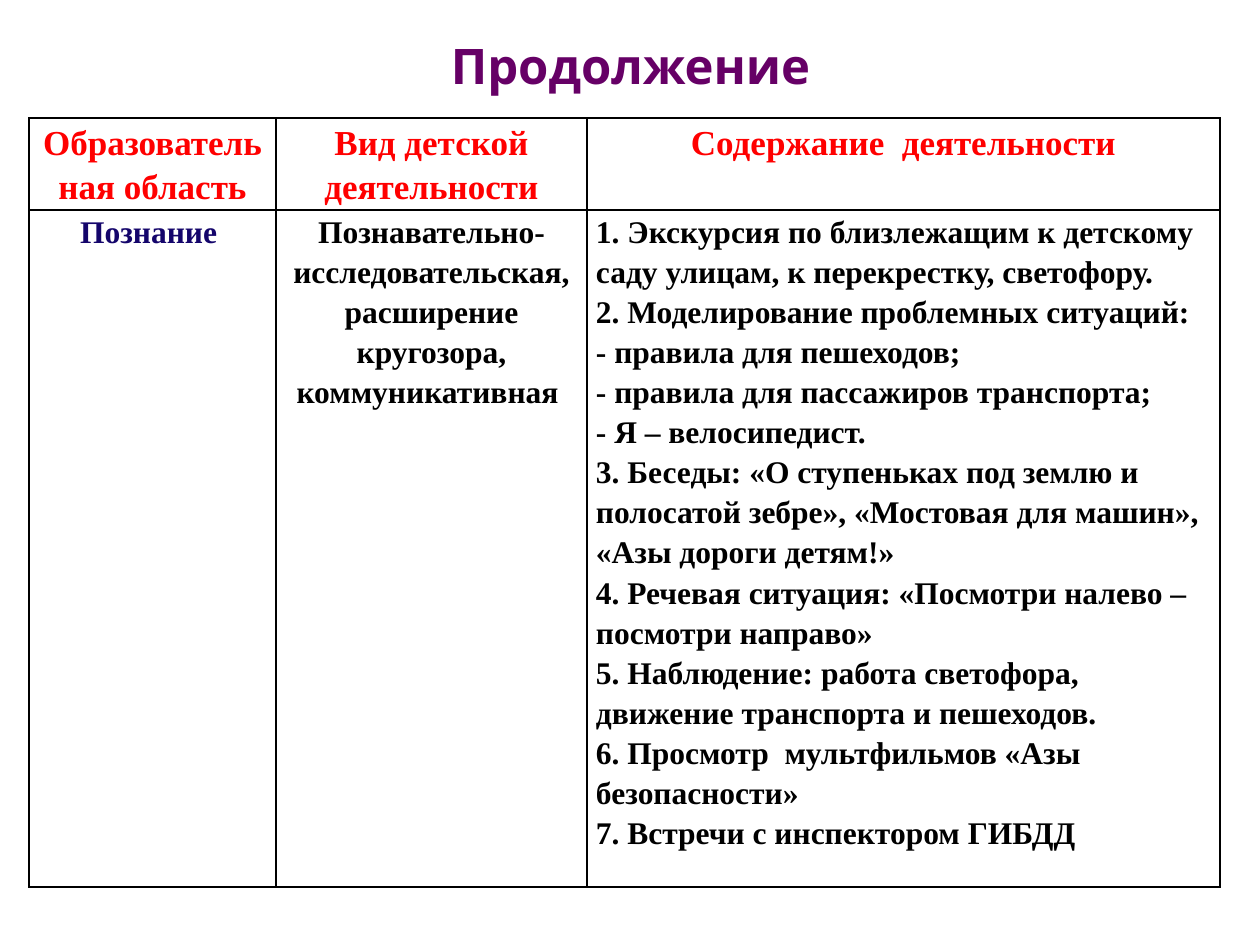
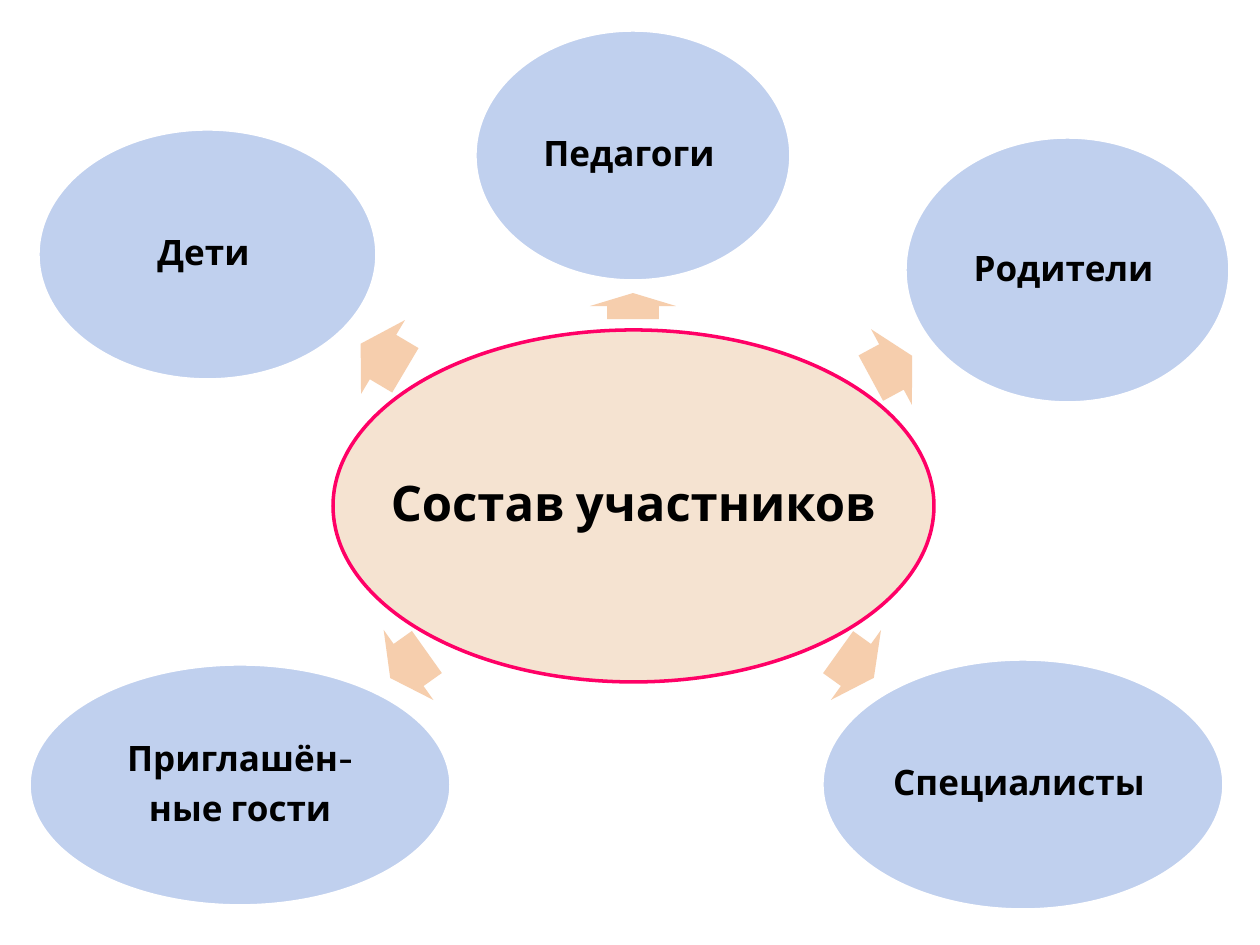
from dataclasses import dataclass

from lxml import etree
from pptx import Presentation
from pptx.dml.color import RGBColor
from pptx.enum.shapes import MSO_SHAPE
from pptx.enum.text import MSO_ANCHOR, MSO_AUTO_SIZE, PP_ALIGN
from pptx.oxml.ns import qn
from pptx.util import Pt

ELLIPSE, ARROW = MSO_SHAPE.OVAL, MSO_SHAPE.RIGHT_ARROW
CENTER, LEFT = PP_ALIGN.CENTER, PP_ALIGN.LEFT
MIDDLE = MSO_ANCHOR.MIDDLE
FIT_SHAPE = MSO_AUTO_SIZE.SHAPE_TO_FIT_TEXT
EMU_PER_PX = 914400 / 126
BLANK_LAYOUT = 6


@dataclass(frozen=True)
class Theme:
    display_font: str = "Cabin"
    table_font: str = "Times New Roman"
    title_size: int = 28
    label_size: int = 20
    body_size: int = 18
    title: str = "660066"
    header: str = "FF0000"
    area: str = "14056B"
    text: str = "000000"
    paper: str = "FFFFFF"
    hub: str = "F5E3D1"
    hub_line: str = "FF0066"
    satellite: str = "C0D0EE"
    arrow: str = "F6CEAD"


THEME = Theme()

HEADERS = [
    ["Образователь", "ная область"],
    ["Вид детской деятельности"],
    ["Содержание  деятельности"],
]
AREA = ["Познание "]
ACTIVITY = ["Познавательно-исследовательская, расширение кругозора, коммуникативная "]
CONTENT = [
    "1. Экскурсия по близлежащим к детскому саду улицам, к перекрестку, светофору.",
    "2. Моделирование проблемных ситуаций:",
    "- правила для пешеходов;",
    "- правила для пассажиров транспорта;",
    "- Я – велосипедист.",
    "3. Беседы: «О ступеньках под землю и полосатой зебре», «Мостовая для машин», "
    "«Азы дороги детям!»",
    "4. Речевая ситуация: «Посмотри налево – посмотри направо»",
    "5. Наблюдение: работа светофора, движение транспорта и пешеходов.",
    "6. Просмотр  мультфильмов «Азы безопасности»",
    "7. Встречи с инспектором ГИБДД",
]
COLUMN_WIDTHS = [247, 311, 633]
ROW_HEIGHTS = [92, 677]

# Each participant: lines, ellipse box, arrow box, arrow angle; boxes start at the diagram corner.
PARTICIPANTS = [
    (["Педагоги "], (446, 0, 316, 251), (591, 233, 26, 86), 270),
    (["Родители "], (876, 107, 325, 266), (839, 294, 47, 86), 331.6),
    (["Специалисты "], (793, 629, 402, 251), (805, 592, 44, 86), 35.6),
    (["Приглашён-", "ные гости"], (0, 634, 422, 242), (357, 592, 45, 86), 144.6),
    (["Дети "], (9, 99, 339, 251), (328, 284, 52, 86), 210.7),
]
HUB_BOX = (304, 300, 601, 352)


def px(length):
    return round(length * EMU_PER_PX)


def place(box):
    return [px(length) for length in box]


def rgb(color):
    return RGBColor.from_string(color)


def write(frame, lines, font, size, color, align=CENTER, spacing=None, after=None):
    """Fill a text frame with one bold paragraph per line."""
    for index, line in enumerate(lines):
        para = frame.paragraphs[0] if index == 0 else frame.add_paragraph()
        para.alignment = align
        para.line_spacing = spacing
        para.space_after = after
        span = para.add_run()
        span.text = line
        span.font.name, span.font.size, span.font.bold = font, Pt(size), True
        span.font.color.rgb = rgb(color)


def border_cell(cell):
    properties = cell._tc.get_or_add_tcPr()
    for index, side in enumerate(("a:lnL", "a:lnR", "a:lnT", "a:lnB")):
        line = etree.Element(qn(side), w=str(Pt(1)))
        fill = etree.SubElement(line, qn("a:solidFill"))
        etree.SubElement(fill, qn("a:srgbClr"), val=THEME.text)
        properties.insert(index, line)


def add_title(page, box, text):
    frame = page.shapes.add_textbox(*place(box)).text_frame
    frame.word_wrap = True
    frame.auto_size = FIT_SHAPE
    write(frame, [text], THEME.display_font, THEME.title_size, THEME.title)


def add_activity_table(page, left, top):
    size = (sum(COLUMN_WIDTHS), sum(ROW_HEIGHTS))
    table = page.shapes.add_table(
        len(ROW_HEIGHTS), len(COLUMN_WIDTHS), *place((left, top, *size))
    ).table
    table.first_row = table.horz_banding = False
    for column, width in zip(table.columns, COLUMN_WIDTHS):
        column.width = px(width)
    for row, height in zip(table.rows, ROW_HEIGHTS):
        row.height = px(height)

    entries = [(lines, THEME.label_size, THEME.header, CENTER) for lines in HEADERS]
    entries += [
        (AREA, THEME.body_size, THEME.area, CENTER),
        (ACTIVITY, THEME.body_size, THEME.text, CENTER),
        (CONTENT, THEME.body_size, THEME.text, LEFT),
    ]
    for cell, (lines, text_size, color, align) in zip(table.iter_cells(), entries):
        cell.margin_left = cell.margin_right = px(9)
        cell.margin_top = cell.margin_bottom = 0
        cell.fill.solid()
        cell.fill.fore_color.rgb = rgb(THEME.paper)
        border_cell(cell)
        write(cell.text_frame, lines, THEME.table_font, text_size, color, align, 1.15)


def add_figure(page, kind, box, fill, line=None):
    figure = page.shapes.add_shape(kind, *place(box))
    figure.shadow.inherit = False
    figure.fill.solid()
    figure.fill.fore_color.rgb = rgb(fill)
    if line:
        figure.line.color.rgb = rgb(line)
        figure.line.width = Pt(2)
    else:
        figure.line.fill.background()
    return figure


def add_ellipse(page, box, lines, size, fill, line):
    frame = add_figure(page, ELLIPSE, box, fill, line).text_frame
    frame.word_wrap = False
    frame.vertical_anchor = MIDDLE
    frame.margin_left = frame.margin_right = px(4)
    frame.margin_top = frame.margin_bottom = px(4)
    write(frame, lines, THEME.display_font, size, THEME.text,
          spacing=0.9, after=Pt(round(size * 0.35)))


def add_participants_diagram(page, left, top):
    """Draw the hub and its satellites, with an arrow out to each one."""
    def shifted(box):
        return (left + box[0], top + box[1], *box[2:])

    add_ellipse(page, shifted(HUB_BOX), ["Состав участников"],
                THEME.title_size, THEME.hub, THEME.hub_line)
    for lines, ellipse_box, arrow_box, angle in PARTICIPANTS:
        arrow = add_figure(page, ARROW, shifted(arrow_box), THEME.arrow)
        arrow.adjustments[0], arrow.adjustments[1] = 0.6, 0.5
        arrow.rotation = angle
        add_ellipse(page, shifted(ellipse_box), lines,
                    THEME.label_size, THEME.satellite, THEME.paper)


def add_page(deck):
    page = deck.slides.add_slide(deck.slide_layouts[BLANK_LAYOUT])
    page.background.fill.solid()
    page.background.fill.fore_color.rgb = rgb(THEME.paper)
    return page


def main():
    deck = Presentation()
    deck.slide_width, deck.slide_height = px(1260), px(945)

    table_page = add_page(deck)
    add_activity_table(table_page, 29, 118)
    add_title(table_page, (178, 29, 916, 72), "Продолжение ")

    add_participants_diagram(add_page(deck), 29, 30)
    deck.save("out.pptx")


if __name__ == "__main__":
    main()
